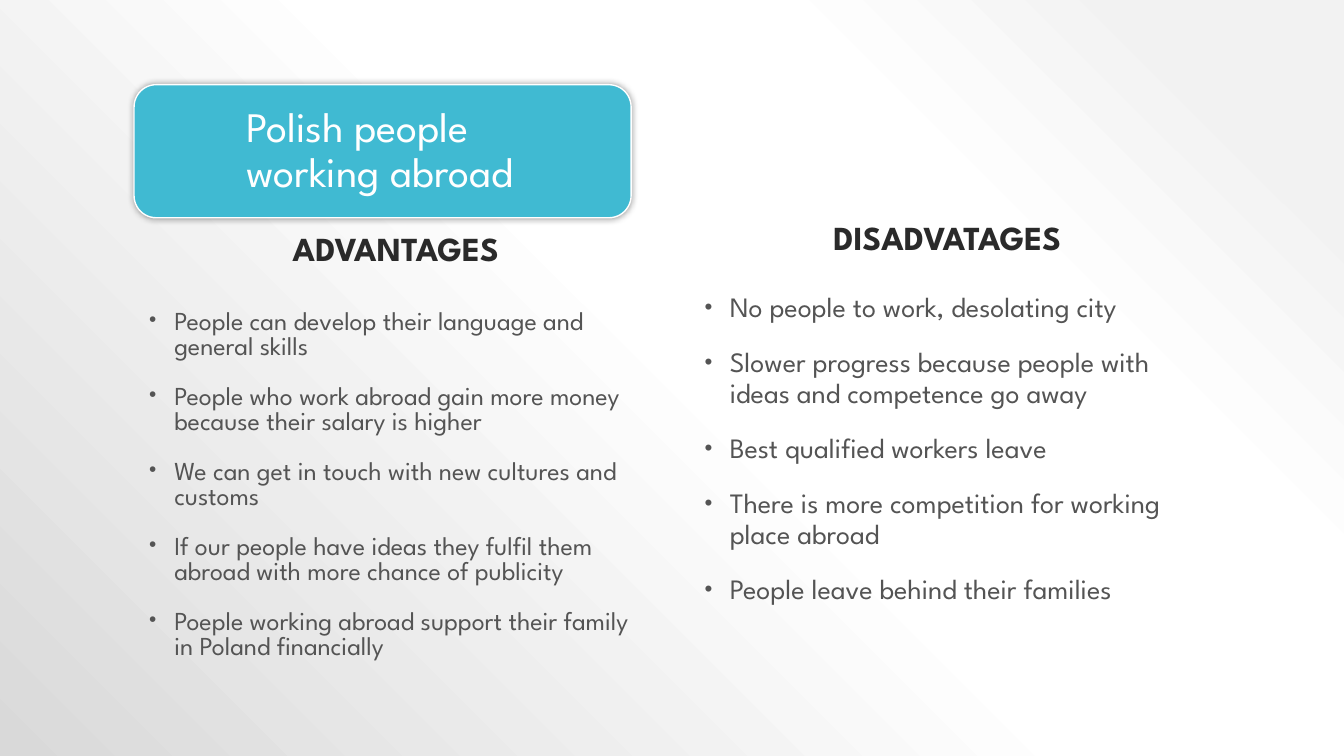
from pptx import Presentation
from pptx.dml.color import RGBColor
from pptx.enum.shapes import MSO_SHAPE as Preset
from pptx.enum.text import MSO_ANCHOR as Anchor, PP_ALIGN as Align
from pptx.oxml import parse_xml
from pptx.oxml.ns import nsdecls
from pptx.util import Inches, Pt

TEAL = RGBColor(0x40, 0xBA, 0xD2)
WHITE = RGBColor(0xFF, 0xFF, 0xFF)
BLACK = RGBColor(0x00, 0x00, 0x00)
HEADING = RGBColor(0x2A, 0x2A, 0x2A)
BODY = RGBColor(0x54, 0x54, 0x54)
PALE = RGBColor(0xF2, 0xF2, 0xF2)
GREY = RGBColor(0xD9, 0xD9, 0xD9)
BACKDROP = [(10, PALE), (28, WHITE), (48, WHITE), (100, GREY)]

ADVANTAGES = [
    "People can develop their language and general skills",
    "People who work abroad gain more money because their salary is higher",
    "We can get in touch with new cultures and customs",
    "If our people have ideas they fulfil them abroad with more chance of publicity",
    "Poeple working abroad support their family in Poland financially",
]
DISADVANTAGES = [
    "No people to work, desolating city",
    "Slower progress because people with ideas and competence go away",
    "Best qualified workers leave",
    "There is more competition for working place abroad",
    "People leave behind their families",
]


def add_bullet(paragraph, color):
    properties = paragraph._p.get_or_add_pPr()
    properties.set("marL", str(Inches(0.3)))
    properties.set("indent", str(Inches(-0.25)))
    for element in (
        f'<a:buClr {nsdecls("a")}><a:srgbClr val="{color}"/></a:buClr>',
        f'<a:buSzPct {nsdecls("a")} val="80000"/>',
        f'<a:buFont {nsdecls("a")} typeface="Arial"/>',
        f'<a:buChar {nsdecls("a")} char="•"/>',
    ):
        properties.append(parse_xml(element))


def write(frame, lines, *, size, color, bold=False, align=Align.LEFT,
          anchor=Anchor.TOP, spacing=0.9, before=0, bullets=False,
          font="League Spartan"):
    """Fill a text frame with one paragraph per line."""
    frame.word_wrap = True
    frame.vertical_anchor = anchor
    for index, line in enumerate(lines):
        paragraph = frame.add_paragraph() if index else frame.paragraphs[0]
        paragraph.alignment = align
        paragraph.line_spacing = spacing
        paragraph.space_before = Pt(before)
        if bullets:
            add_bullet(paragraph, color)
        run = paragraph.add_run()
        run.text = line
        run.font.name = font
        run.font.size = Pt(size)
        run.font.bold = bold
        run.font.color.rgb = color


class ComparisonSlide:
    def __init__(self, deck):
        self.slide = deck.slides.add_slide(deck.slide_layouts[6])

    def backdrop(self, stops):
        """Radial gradient spreading from the top right corner."""
        marks = "".join(
            f'<a:gs pos="{percent * 1000}"><a:srgbClr val="{color}"/></a:gs>'
            for percent, color in stops)
        self.slide._element.cSld.insert(0, parse_xml(
            f'<p:bg {nsdecls("p", "a")}><p:bgPr><a:gradFill rotWithShape="1">'
            f'<a:gsLst>{marks}</a:gsLst><a:path path="circle">'
            '<a:fillToRect l="100000" b="100000"/></a:path></a:gradFill>'
            '<a:effectLst/></p:bgPr></p:bg>'))

    def title(self, text, left, top, width, height):
        plate = self.slide.shapes.add_shape(
            Preset.ROUNDED_RECTANGLE, *map(Inches, (left, top, width, height)))
        plate.fill.solid()
        plate.fill.fore_color.rgb = TEAL
        plate.line.color.rgb = WHITE
        plate.line.width = Pt(1)
        plate._element.spPr.append(parse_xml(
            f'<a:effectLst {nsdecls("a")}>'
            f'<a:outerShdw blurRad="{Pt(5)}" dist="0" dir="0" rotWithShape="0">'
            f'<a:srgbClr val="{BLACK}"><a:alpha val="40000"/></a:srgbClr>'
            '</a:outerShdw></a:effectLst>'))
        frame = plate.text_frame
        frame.margin_left = Inches(1.05)
        frame.margin_right = Inches(0.12)
        write(frame, [text], size=30, color=WHITE, anchor=Anchor.MIDDLE)

    def text_box(self, lines, left, top, width, height, **style):
        box = self.slide.shapes.add_textbox(
            *map(Inches, (left, top, width, height)))
        write(box.text_frame, lines, **style)

    def heading(self, text, left, top):
        self.text_box([text], left, top, 5.15, 0.92, size=24, color=HEADING,
                      bold=True, align=Align.CENTER, anchor=Anchor.MIDDLE)

    def points(self, lines, left, top, width, height, size, spacing):
        self.text_box(lines, left, top, width, height, size=size, color=BODY,
                      spacing=spacing, before=18, bullets=True)


def main():
    deck = Presentation()
    deck.slide_width = Inches(13.33)
    deck.slide_height = Inches(7.5)

    page = ComparisonSlide(deck)
    page.backdrop(BACKDROP)
    page.heading("ADVANTAGES", 1.35, 2.03)
    page.points(ADVANTAGES, 1.33, 3.03, 5.19, 4.1, size=18.5, spacing=0.8)
    page.heading("DISADVATAGES", 6.82, 1.92)
    page.points(DISADVANTAGES, 6.84, 2.86, 5.24, 4.6, size=20, spacing=0.9)
    page.title("Polish people working abroad", 1.33, 0.84, 4.93, 1.32)

    deck.save("out.pptx")


if __name__ == "__main__":
    main()
